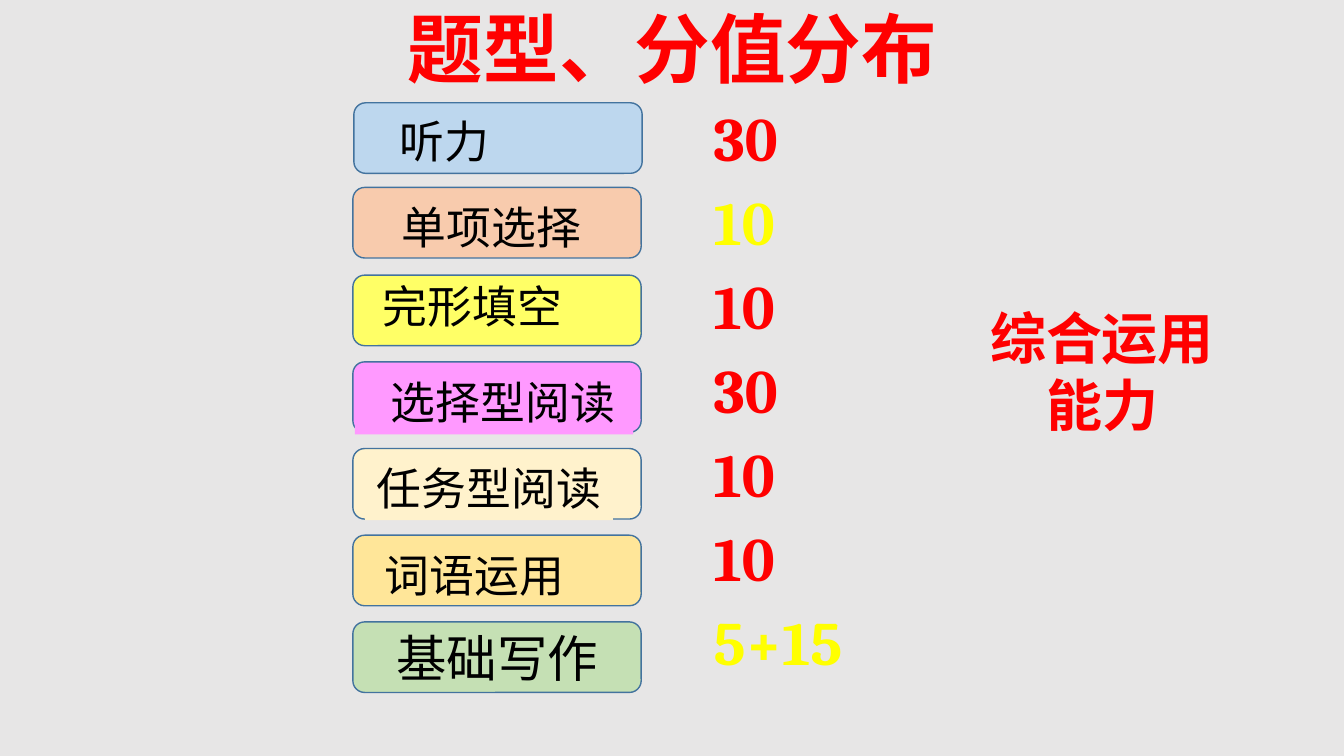
from pptx import Presentation
from pptx import util as u
from pptx.dml.color import RGBColor
from pptx.enum import shapes, text

PX = 9144  # 100 px to the inch

THEME = {
    "background": "E7E6E6",
    "outline": "43739E",
    "ink": "000000",
    "red": "FF0000",
    "yellow": "FFFF00",
    "title": 54,
    "score": 44,
    "remark": 40,
    "writing": 36,
    "label": 32,
    "score_line": 60,
}


def place(box, left, top, width, height):
    box.left, box.top, box.width, box.height = (v * PX for v in (left, top, width, height))


def write(box, lines, colors, align=text.PP_ALIGN.CENTER, spacing=None,
          fit=text.MSO_AUTO_SIZE.SHAPE_TO_FIT_TEXT, anchor=text.MSO_ANCHOR.TOP, **font):
    """Fill a box with one paragraph per line, each in its own colour."""
    frame = box.text_frame
    frame.word_wrap = True
    frame.auto_size = fit
    frame.vertical_anchor = anchor
    for i, (line, color) in enumerate(zip(lines, colors)):
        para = frame.add_paragraph() if i else frame.paragraphs[0]
        para.alignment = align
        para.line_spacing = spacing
        span = para.add_run()
        span.text = line
        for name, value in font.items():
            setattr(span.font, name, value)
        span.font.color.rgb = RGBColor.from_string(THEME[color])


deck = Presentation()
deck.slide_width, deck.slide_height = 1333 * PX, 750 * PX
page = deck.slides.add_slide(deck.slide_layouts[5])
page.background.fill.solid()
page.background.fill.fore_color.rgb = RGBColor.from_string(THEME["background"])

# Title
title = page.shapes.title
place(title, 292, 0, 750, 94)
write(title, ["题型、分值分布"], ["red"], fit=text.MSO_AUTO_SIZE.NONE,
      anchor=text.MSO_ANCHOR.MIDDLE, name="Calibri", size=u.Pt(THEME["title"]), bold=True)

# Question types: name, card left and top, card fill,
# label left, top and width, label indent, whether the label is filled
question_types = [
    ("听力", 351, 102, "BDD7EE", 298, 108, 286, 0, False),
    ("单项选择", 350, 186, "F8CBAD", 321, 193, 305, 28, False),
    ("完形填空", 350, 273, "FFFF66", 309, 272, 311, 8, False),
    ("选择型阅读", 350, 359, "FF99FF", 352, 367, 276, 18, True),
    ("任务型阅读", 350, 445, "FFF2CC", 362, 452, 246, 0, True),
    ("词语运用", 350, 531, "FFE699", 315, 538, 311, 0, False),
    ("基础写作", 350, 617, "C5E0B4", None, None, None, 0, False),
]
for name, left, top, fill, label_left, label_top, label_width, indent, filled in question_types:
    card = page.shapes.add_shape(shapes.MSO_SHAPE.ROUNDED_RECTANGLE,
                                 left * PX, top * PX, 286 * PX, 70 * PX)
    card.shadow.inherit = False
    card.fill.solid()
    card.fill.fore_color.rgb = RGBColor.from_string(fill)
    card.line.color.rgb = RGBColor.from_string(THEME["outline"])
    card.line.width = u.Pt(1)
    if label_left is None:
        write(card, [name], ["ink"], fit=text.MSO_AUTO_SIZE.NONE,
              anchor=text.MSO_ANCHOR.MIDDLE, name="Calibri", size=u.Pt(THEME["writing"]))
        continue
    label = page.shapes.add_textbox(label_left * PX, label_top * PX, label_width * PX, 64 * PX)
    label.text_frame.margin_left = (10 + indent) * PX
    if filled:
        label.fill.solid()
        label.fill.fore_color.rgb = RGBColor.from_string(fill)
    write(label, [name], ["ink"], name="Cambria", size=u.Pt(THEME["label"]))

# Scores
scores = page.shapes.add_textbox(698 * PX, 84 * PX, 262 * PX, 599 * PX)
write(scores, ["30", "10", "10", "30", "10", "10", "5+15"],
      ["red", "yellow", "red", "red", "red", "red", "yellow"],
      align=text.PP_ALIGN.LEFT, spacing=u.Pt(THEME["score_line"]),
      name="Cambria", size=u.Pt(THEME["score"]), bold=True)

# Remark
remark = page.shapes.add_textbox(970 * PX, 296 * PX, 246 * PX, 145 * PX)
write(remark, ["综合运用能力"], ["red"], name="Cambria", size=u.Pt(THEME["remark"]), bold=True)

deck.save("out.pptx")
